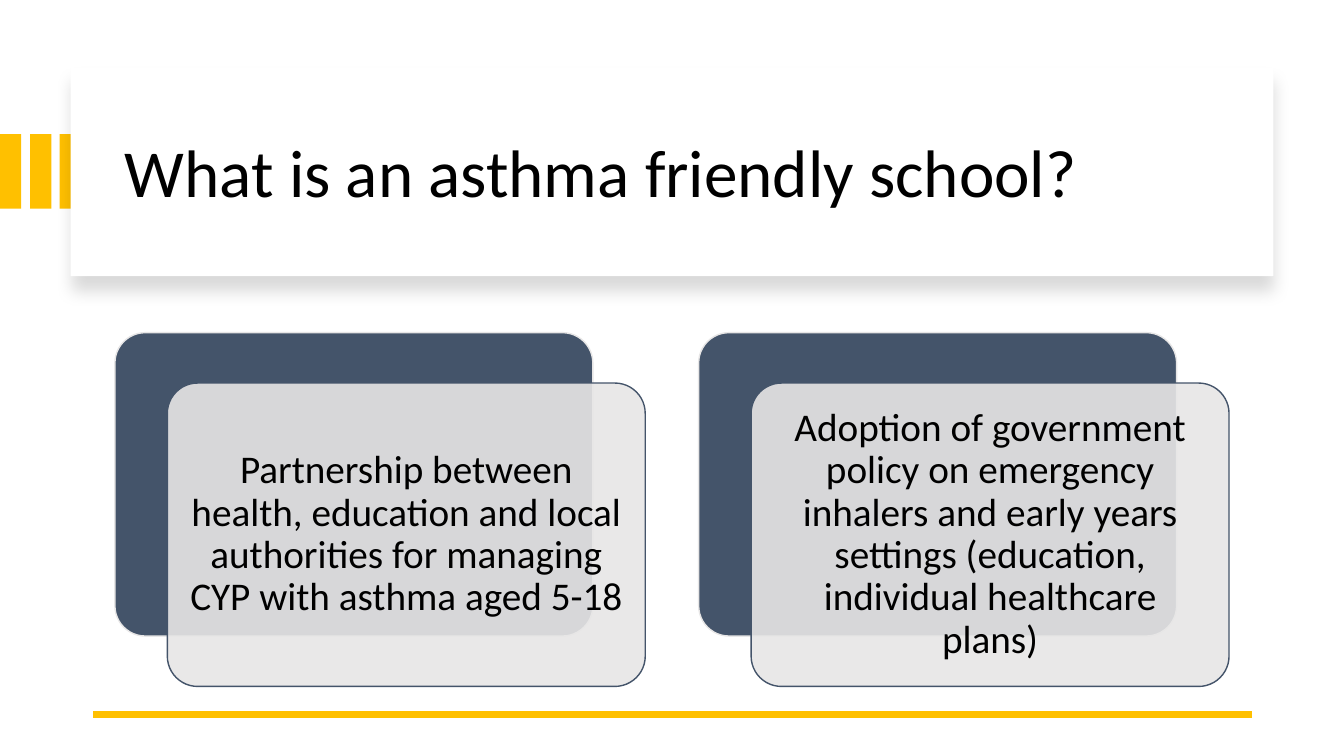
from pptx import Presentation
from pptx.dml.color import RGBColor
from pptx.enum.shapes import MSO_CONNECTOR, MSO_SHAPE
from pptx.enum.text import MSO_ANCHOR, PP_ALIGN
from pptx.oxml.ns import qn
from pptx.util import Pt
from lxml.etree import SubElement

PX = 9144
COLORS = {"gold": "FFC000", "white": "FFFFFF", "black": "000000", "slate": "44546A", "mist": "E7E6E6"}
CARDS = [
    "Partnership between health, education and local authorities for managing CYP with asthma aged 5-18",
    "Adoption of government policy on emergency inhalers and early years settings "
    "(education, individual healthcare plans)",
]


def color(name):
    """Return the named palette colour."""
    return RGBColor.from_string(COLORS[name])


def scale(*lengths):
    """Turn px lengths into EMU."""
    return [length * PX for length in lengths]


def add_block(page, kind, box, fill, line=None):
    """Add a filled shape without shadow, with an optional thin outline."""
    block = page.shapes.add_shape(kind, *scale(*box))
    block.shadow.inherit = False
    block.fill.solid()
    block.fill.fore_color.rgb = color(fill)
    if line:
        block.line.color.rgb = color(line)
        block.line.width = Pt(1)
    else:
        block.line.fill.background()
    return block


def write_text(holder, text, size, align=PP_ALIGN.LEFT, insets=(10, 5)):
    """Write one wrapped, vertically centred paragraph into a shape."""
    frame = holder.text_frame
    frame.word_wrap = True
    frame.vertical_anchor = MSO_ANCHOR.MIDDLE
    frame.margin_left = frame.margin_right = insets[0] * PX
    frame.margin_top = frame.margin_bottom = insets[1] * PX
    para = frame.paragraphs[0]
    para.alignment = align
    para.line_spacing = 0.9
    span = para.add_run()
    span.text = text
    span.font.name = "Calibri"
    span.font.size = Pt(size)
    span.font.color.rgb = color("black")


def add_soft_shadow(block):
    """Give a block a faint shadow falling straight down."""
    effects = block._element.spPr.find(qn("a:effectLst"))
    shadow = SubElement(effects, qn("a:outerShdw"), blurRad=str(Pt(11)), dist=str(Pt(10)),
                        dir="5400000", algn="t", rotWithShape="0")
    tint = SubElement(shadow, qn("a:srgbClr"), val=COLORS["black"])
    SubElement(tint, qn("a:alpha"), val="15000")


def add_stripes(page, left, top, width, height, count=3):
    """Draw the gold stripes, evenly spread over the box."""
    stripe = 21
    step = (width - stripe) / (count - 1)
    for index in range(count):
        add_block(page, MSO_SHAPE.RECTANGLE, (left + round(index * step), top, stripe, height), "gold")


def add_header(page, left, top, width, height):
    """Draw the white header panel and its title."""
    panel = add_block(page, MSO_SHAPE.RECTANGLE, (left, top, width, height), "white")
    add_soft_shadow(panel)
    title = page.shapes.add_textbox(*scale(left + 44, top + 22, width - 80, height - 37))
    write_text(title, "What is an asthma friendly school?", 48)


def add_card(page, left, top, width, height, text):
    """Draw a dark card with a translucent text card shifted over it."""
    shift_x, shift_y = 52, 50
    size = (width - shift_x, height - shift_y)
    back = add_block(page, MSO_SHAPE.ROUNDED_RECTANGLE, (left, top, *size), "slate", "mist")
    front = add_block(page, MSO_SHAPE.ROUNDED_RECTANGLE,
                      (left + shift_x, top + shift_y, *size), "mist", "slate")
    for block in (back, front):
        block.adjustments[0] = 0.1
    tint = front._element.spPr.find(qn("a:solidFill")).find(qn("a:srgbClr"))
    SubElement(tint, qn("a:alpha"), val="90000")
    write_text(front, text, 28, align=PP_ALIGN.CENTER, insets=(12, 12))


def add_cards(page, left, top, width, height):
    """Spread the cards over the box in equal columns."""
    gap = 53
    card_width = (width - gap * (len(CARDS) - 1)) // len(CARDS)
    for index, text in enumerate(CARDS):
        add_card(page, left + index * (card_width + gap), top, card_width, height, text)


def add_footer_rule(page, left, top, width):
    """Draw the gold rule at the foot of the slide."""
    rule = page.shapes.add_connector(MSO_CONNECTOR.STRAIGHT, *scale(left + width, top, left, top))
    rule.line.color.rgb = color("gold")
    rule.line.width = Pt(4.5)
    SubElement(rule._element.spPr, qn("a:effectLst"))


def main():
    """Build the slide and save the deck."""
    deck = Presentation()
    deck.slide_width, deck.slide_height = scale(1333, 750)
    page = deck.slides.add_slide(deck.slide_layouts[6])
    add_stripes(page, 0, 133, 80, 74)
    add_header(page, 70, 67, 1193, 207)
    add_footer_rule(page, 92, 709, 1150)
    add_cards(page, 114, 330, 1105, 351)
    deck.save("out.pptx")


if __name__ == "__main__":
    main()
